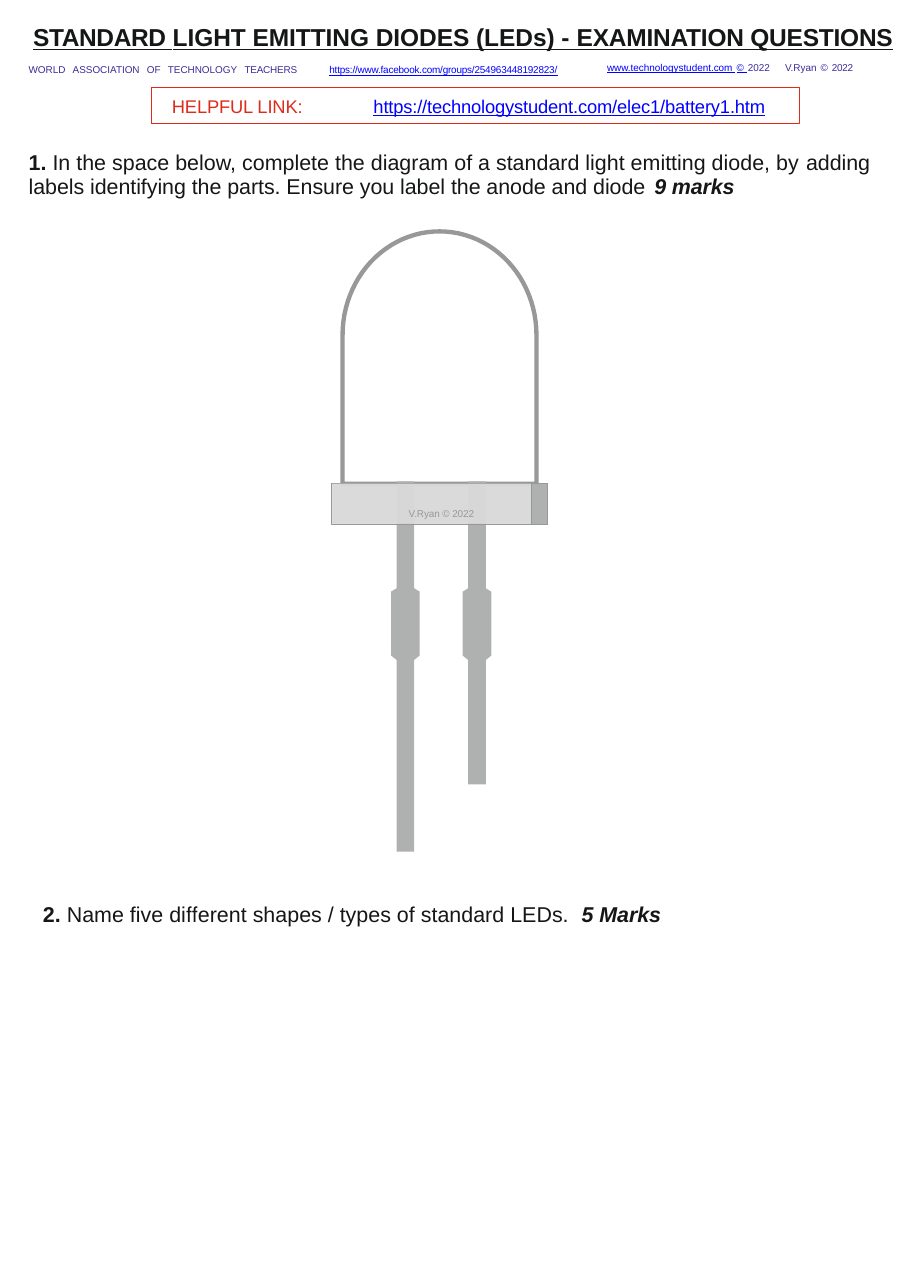
"""Build a one-page LED examination sheet with a diode diagram to label."""
from math import cos, pi, sin

from lxml.etree import SubElement
from pptx import Presentation
from pptx.dml.color import RGBColor
from pptx.enum.shapes import MSO_SHAPE as Shape
from pptx.enum.text import MSO_ANCHOR as Anchor, MSO_AUTO_SIZE as AutoSize, PP_ALIGN as Align
from pptx.oxml.ns import qn
from pptx.util import Inches, Pt

INK = RGBColor(0x15, 0x16, 0x16)
RED = RGBColor(0xDD, 0x2B, 0x1C)
LINK = RGBColor(0x00, 0x00, 0xFF)
VIOLET = RGBColor(0x3C, 0x2B, 0x98)
OUTLINE = RGBColor(0x98, 0x98, 0x99)
METAL = RGBColor(0xAF, 0xB0, 0xB0)
RIM = RGBColor(0xD9, 0xD9, 0xDA)


def paint(shape, fill=None, line=None, width=0.25, alpha=None):
    shape.shadow.inherit = False
    if fill is None:
        shape.fill.background()
    else:
        shape.fill.solid()
        shape.fill.fore_color.rgb = fill
    if alpha:
        colour = shape.fill._xPr.find(qn("a:solidFill"))[0]
        SubElement(colour, qn("a:alpha"), val=str(alpha * 1000))
    if line is None:
        shape.line.fill.background()
    else:
        shape.line.color.rgb = line
        shape.line.width = Pt(width)


def write(shape, size, spans, left=0.01, top=0.03, tab=None, leading=None):
    frame = shape.text_frame
    frame.word_wrap = True
    frame.auto_size = AutoSize.NONE
    frame.vertical_anchor = Anchor.TOP
    frame.margin_left, frame.margin_top = Inches(left), Inches(top)
    frame.margin_right = frame.margin_bottom = 0
    para = frame.paragraphs[0]
    para.alignment = Align.LEFT
    if leading:
        para.line_spacing = Pt(leading)
    if tab:
        stops = SubElement(para._p.get_or_add_pPr(), qn("a:tabLst"))
        SubElement(stops, qn("a:tab"), pos=str(Inches(tab)), algn="l")
    for text, colour, style, spacing in spans:
        span = para.add_run()
        span.text = text
        span.font.name = "Arial"
        span.font.size = Pt(size)
        span.font.color.rgb = colour
        span.font.bold = "b" in style
        span.font.italic = "i" in style
        span.font.underline = "u" in style
        span.font._element.set("spc", str(round(spacing * 100)))


deck = Presentation()
deck.slide_width, deck.slide_height = Inches(8.26), Inches(11.69)
page = deck.slides.add_slide(deck.slide_layouts[5])
shapes = page.shapes

title = shapes.title
title.left, title.top = Inches(0.29), Inches(0.17)
title.width, title.height = Inches(7.91), Inches(0.29)
write(title, 16, [
    ("STANDARD ", INK, "bu", -0.2),
    ("LIGHT EMITTING DIODES (LEDs) -", INK, "bu", 0),
    (" EXAMINATION QUESTIONS", INK, "bu", -0.1),
])

centre, radius_x, radius_y = 3.99, 0.88, 0.94
shoulder, base = 3.04, 4.39
steps = 48
dome = [(centre - radius_x, base), (centre + radius_x, base)]
dome += [(centre + radius_x * cos(pi * step / steps), shoulder - radius_y * sin(pi * step / steps))
         for step in range(steps + 1)]
outlines = [(dome, None, OUTLINE)]
for lead_centre, lead_end in ((3.68, 7.73), (4.33, 7.12)):
    half = [(0.08, 4.37), (0.08, 5.34), (0.13, 5.37), (0.13, 5.95), (0.08, 5.99), (0.08, lead_end)]
    lead = [(lead_centre + x, y) for x, y in half] + [(lead_centre - x, y) for x, y in reversed(half)]
    outlines.append((lead, METAL, None))
for points, fill, line in outlines:
    corners = [(Inches(x), Inches(y)) for x, y in points]
    builder = shapes.build_freeform(*corners[0])
    builder.add_line_segments(corners[1:], close=True)
    paint(builder.convert_to_shape(), fill, line, 2.83)

for left, width, fill, line, alpha in (
    (3.01, 1.81, RIM, None, 80),
    (3.01, 1.96, None, OUTLINE, None),
    (4.82, 0.15, METAL, OUTLINE, None),
):
    part = shapes.add_shape(Shape.RECTANGLE, Inches(left), Inches(base), Inches(width), Inches(0.37))
    paint(part, fill, line, alpha=alpha)

credit = shapes.add_shape(Shape.RECTANGLE, Inches(3.02), Inches(base), Inches(1.8), Inches(0.36))
paint(credit, RIM, alpha=80)
write(credit, 6.5, [("V.Ryan © 2022", OUTLINE, "", -0.05)], left=0.69, top=0.22)

helpful = shapes.add_shape(Shape.RECTANGLE, Inches(1.37), Inches(0.79), Inches(5.89), Inches(0.33))
paint(helpful, line=RED, width=0.57)
write(helpful, 12, [
    ("HELPFUL LINK:\t", RED, "", -0.1),
    ("https://technologystudent.com/elec1/battery1.htm", LINK, "u", -0.1),
], left=0.19, top=0.07, tab=1.83)

association = []
for word in ("WORLD", "ASSOCIATION", "OF", "TECHNOLOGY"):
    association += [(word, VIOLET, "", 0), (" ", VIOLET, "", 2.9)]
association += [
    ("TEACHERS\t", VIOLET, "", -0.1),
    ("https://www.facebook.com/groups/254963448192823/", LINK, "u", -0.1),
]
site = [
    ("www.technologystudent.com", LINK, "u", 0),
    (" ", LINK, "u", 0.8),
    ("©", LINK, "u", 0),
    (" ", LINK, "u", 0.8),
    ("2022", VIOLET, "", 0),
    (" ", VIOLET, "", 8),
    ("V.Ryan", VIOLET, "", 0),
    (" ", VIOLET, "", 0.8),
    ("©", VIOLET, "", 0),
    (" ", VIOLET, "", 0.8),
    ("2022", VIOLET, "", -0.2),
]
labels = [
    ("1. ", INK, "b", 0),
    ("In the space below, complete the diagram of a standard light emitting diode, by ", INK, "", 0),
    ("adding labels identifying the parts. Ensure you label the anode and diode\t", INK, "", -0.06),
    ("9 marks", INK, "bi", -0.1),
]
types = [
    ("2. ", INK, "b", 0),
    ("Name ﬁve diﬀerent shapes / types of standard LEDs.", INK, "", 0),
    (" ", INK, "", 4),
    ("5 Marks", INK, "bi", -0.05),
]
for left, top, width, height, size, spans, tab, leading in (
    (0.25, 0.55, 5.02, 0.14, 6.5, association, 2.73, None),
    (5.5, 0.53, 2.32, 0.14, 6.5, site, None, None),
    (0.25, 1.34, 7.78, 0.48, 14, labels, 5.68, 15.6),
    (0.38, 8.15, 5.8, 0.26, 14, types, None, None),
):
    box = shapes.add_textbox(Inches(left), Inches(top), Inches(width), Inches(height))
    write(box, size, spans, tab=tab, leading=leading)

deck.save("out.pptx")
